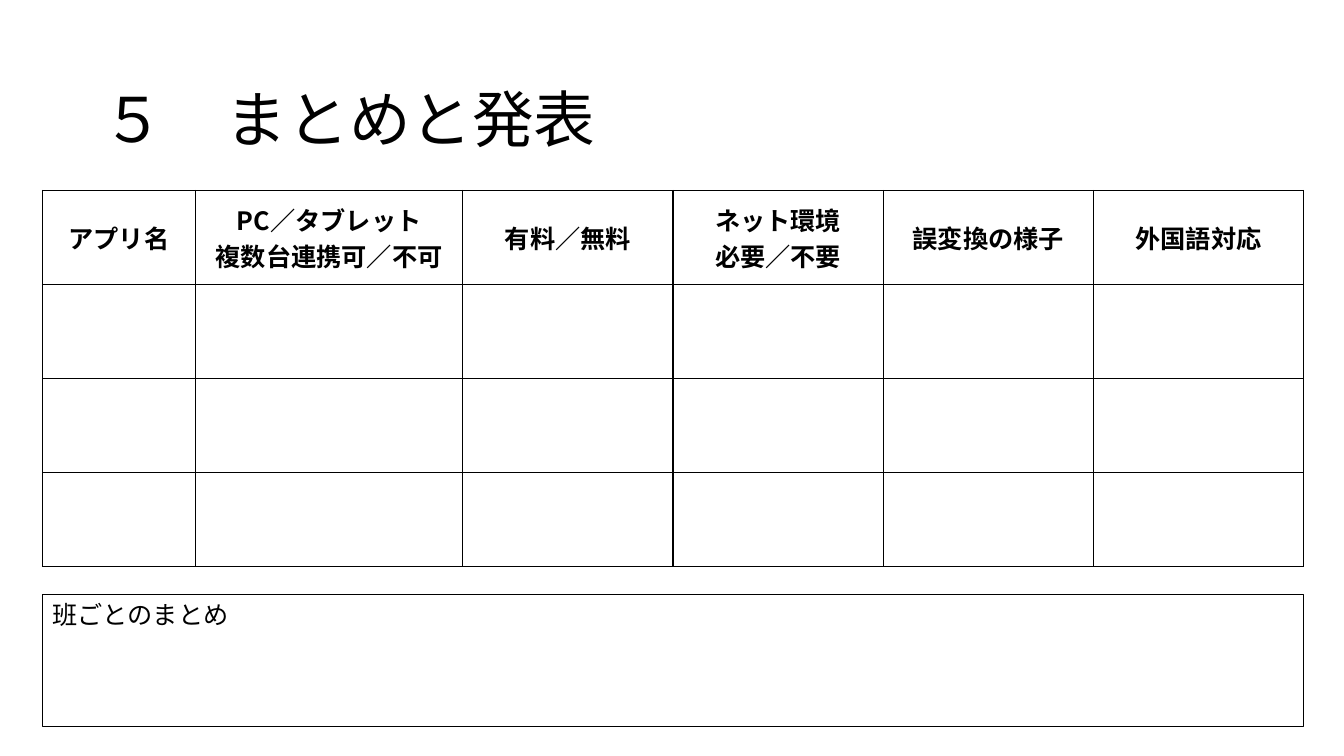
import lxml.etree
import pptx
import pptx.dml.color
import pptx.enum.shapes
import pptx.enum.text
import pptx.oxml.ns
import pptx.util

Inches = pptx.util.Inches
Pt = pptx.util.Pt
qn = pptx.oxml.ns.qn
ALIGN = pptx.enum.text.PP_ALIGN
ANCHOR = pptx.enum.text.MSO_ANCHOR

COLORS = {"ink": "000000", "paper": "FFFFFF"}
HEADINGS = [
    "アプリ名",
    "PC／タブレット\n複数台連携可／不可",
    "有料／無料",
    "ネット環境\n必要／不要",
    "誤変換の様子",
    "外国語対応",
]
COLUMN_WIDTHS = [1.52, 2.65] + [2.085] * 4
ROW_COUNT = 4
ROW_HEIGHT = 0.9325
LEFT, WIDTH = 0.42, 12.51


def rgb(name):
    """Return the named colour."""
    return pptx.dml.color.RGBColor.from_string(COLORS[name])


def write(frame, text, *, font, size, color="ink", bold=False,
          align=ALIGN.LEFT, anchor=ANCHOR.TOP, spacing=None):
    """Fill a text frame with one paragraph per line of text."""
    frame.word_wrap = True
    frame.vertical_anchor = anchor
    for index, line in enumerate(text.split("\n")):
        paragraph = frame.paragraphs[0] if index == 0 else frame.add_paragraph()
        paragraph.alignment = align
        paragraph.line_spacing = spacing
        run = paragraph.add_run()
        run.text = line
        run.font.name = font
        run.font.size = Pt(size)
        run.font.bold = bold
        run.font.color.rgb = rgb(color)
        east_asian = lxml.etree.Element(qn("a:ea"), typeface=font)
        run.font._element.find(qn("a:latin")).addnext(east_asian)


class Worksheet:
    """Hold the slide and its style, and draw each kind of element."""

    font = "Noto Sans CJK JP"
    title_size = 44
    body_size = 18

    def __init__(self, slide):
        """Keep the slide to draw on."""
        self.slide = slide

    def title(self, text, left, top, width, height):
        """Add the slide heading."""
        heading = self.slide.shapes.add_textbox(
            Inches(left), Inches(top), Inches(width), Inches(height))
        write(heading.text_frame, text, font=self.font, size=self.title_size,
              anchor=ANCHOR.MIDDLE, spacing=0.9)

    def border(self, cell, width):
        """Draw all four borders of a cell."""
        properties = cell._tc.get_or_add_tcPr()
        for position, side in enumerate(("lnL", "lnR", "lnT", "lnB")):
            edge = lxml.etree.Element(qn(f"a:{side}"), w=str(Pt(width)))
            fill = lxml.etree.SubElement(edge, qn("a:solidFill"))
            lxml.etree.SubElement(fill, qn("a:srgbClr"), val=COLORS["ink"])
            properties.insert(position, edge)

    def comparison(self, headings, widths, row_count, row_height, left, top):
        """Add a table with headings above empty rows."""
        table = self.slide.shapes.add_table(
            row_count, len(headings), Inches(left), Inches(top),
            Inches(sum(widths)), Inches(row_height * row_count)).table
        for column, width in zip(table.columns, widths):
            column.width = Inches(width)
        for row in table.rows:
            row.height = Inches(row_height)
        for cell in table.iter_cells():
            cell.fill.solid()
            cell.fill.fore_color.rgb = rgb("paper")
            self.border(cell, 1)
        for column, heading in enumerate(headings):
            cell = table.cell(0, column)
            cell.vertical_anchor = ANCHOR.MIDDLE
            write(cell.text_frame, heading, font=self.font, size=self.body_size,
                  bold=True, align=ALIGN.CENTER, anchor=ANCHOR.MIDDLE)

    def summary(self, text, left, top, width, height):
        """Add an outlined box for the group summary."""
        box = self.slide.shapes.add_shape(
            pptx.enum.shapes.MSO_SHAPE.RECTANGLE,
            Inches(left), Inches(top), Inches(width), Inches(height))
        box.shadow.inherit = False
        box.fill.background()
        box.line.color.rgb = rgb("ink")
        box.line.width = Pt(0.75)
        write(box.text_frame, text, font=self.font, size=self.body_size)


def main():
    """Build and save the slide."""
    deck = pptx.Presentation()
    deck.slide_width, deck.slide_height = Inches(13.33), Inches(7.5)
    sheet = Worksheet(deck.slides.add_slide(deck.slide_layouts[6]))
    sheet.title("５　まとめと発表", 0.92, 0.4, 11.5, 1.63)
    sheet.comparison(HEADINGS, COLUMN_WIDTHS, ROW_COUNT, ROW_HEIGHT, LEFT, 1.89)
    sheet.summary("班ごとのまとめ", LEFT, 5.9, WIDTH, 1.31)
    deck.save("out.pptx")


if __name__ == "__main__":
    main()
